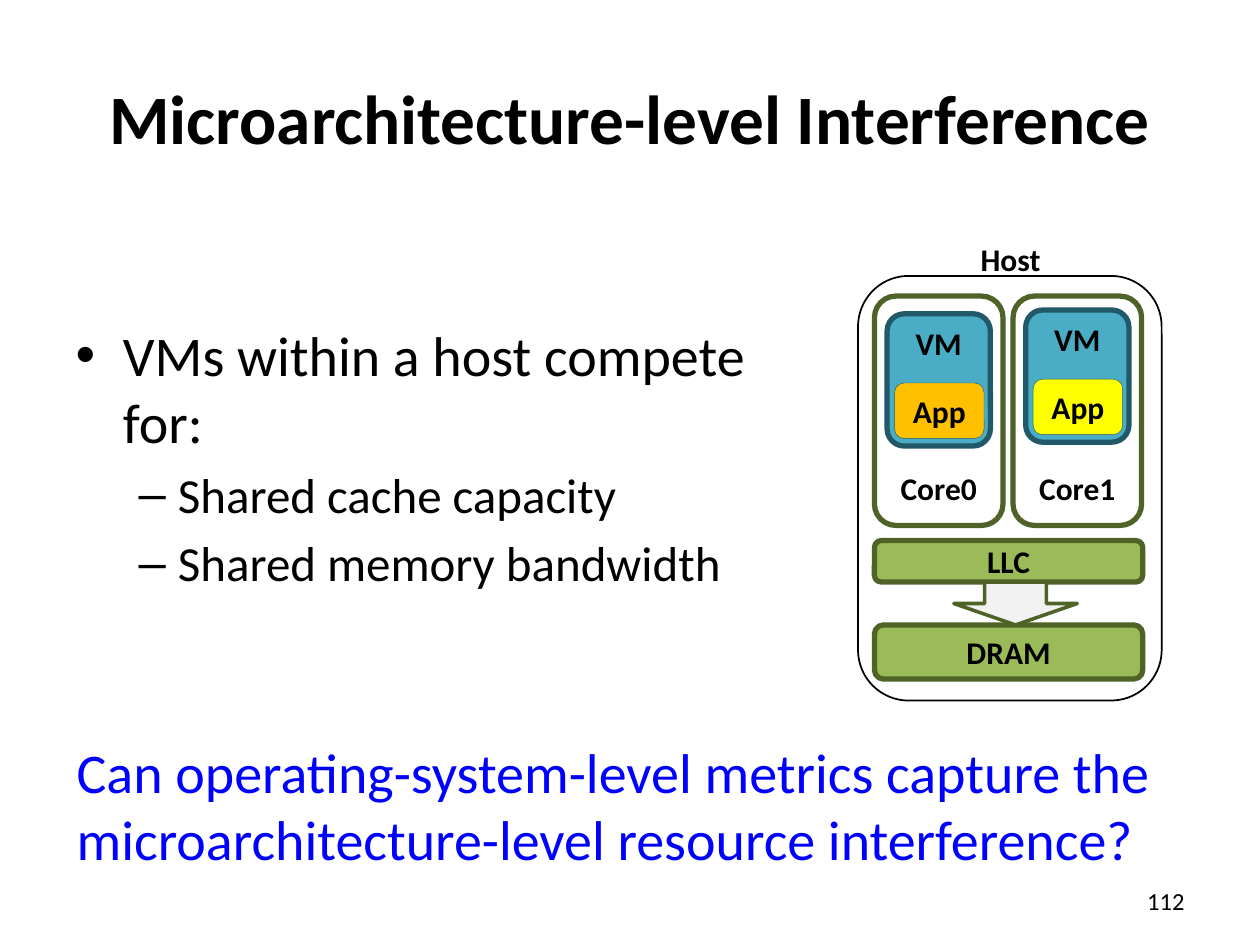
from pptx import Presentation
from pptx.dml.color import RGBColor
from pptx.enum.shapes import MSO_SHAPE
from pptx.enum.text import MSO_ANCHOR, PP_ALIGN
from pptx.util import Inches, Pt


def style_text(paragraph, size, bold=False, color="000000", align=None):
    paragraph.font.name = "Calibri"
    paragraph.font.size = Pt(size)
    paragraph.font.bold = bold
    paragraph.font.color.rgb = RGBColor.from_string(color)
    paragraph.alignment = align


def add_block(box, line, width, fill=None, label="", anchor=MSO_ANCHOR.MIDDLE,
              kind=MSO_SHAPE.ROUNDED_RECTANGLE):
    shape = slide.shapes.add_shape(kind, *map(Inches, box))
    shape.shadow.inherit = False
    shape.line.color.rgb = RGBColor.from_string(line)
    shape.line.width = Pt(width)
    if fill:
        shape.fill.solid()
        shape.fill.fore_color.rgb = RGBColor.from_string(fill)
    else:
        shape.fill.background()
    if label:
        frame = shape.text_frame
        frame.text = label
        frame.vertical_anchor = anchor
        frame.margin_left = frame.margin_right = 0
        frame.margin_top = Inches(0.04)
        # Labels at the bottom edge keep clear of the thick outline
        frame.margin_bottom = Inches(0.1 if anchor == MSO_ANCHOR.BOTTOM else 0.04)
        style_text(frame.paragraphs[0], 18, bold=True, align=PP_ALIGN.CENTER)


presentation = Presentation()
presentation.slide_width = Inches(10)
presentation.slide_height = Inches(7.5)
slide = presentation.slides.add_slide(presentation.slide_layouts[1])

# Title
title = slide.shapes.title
title.left, title.top, title.width, title.height = map(Inches, (0.5, 0.3, 9, 1.25))
title.text_frame.text = "Microarchitecture-level Interference"
title.text_frame.vertical_anchor = MSO_ANCHOR.MIDDLE
style_text(title.text_frame.paragraphs[0], 39.6, bold=True, align=PP_ALIGN.CENTER)

# Bullet list
body = slide.placeholders[1]
body.left, body.top, body.width, body.height = map(Inches, (0.5, 2.49, 6.23, 2.54))
bullets = [
    ("VMs within a host compete for:", 0, 32),
    ("Shared cache capacity", 1, 28),
    ("Shared memory bandwidth", 1, 28),
]
body.text_frame.text = "\n".join(text for text, level, size in bullets)
for paragraph, (text, level, size) in zip(body.text_frame.paragraphs, bullets):
    paragraph.level = level
    style_text(paragraph, size)

# Host outline
GREEN, TEAL = "4F6228", "215968"
add_block((6.81, 2.19, 2.41, 3.37), "000000", 1)

# Cores, each with a virtual machine and its application
cores = [
    ("Core0", 6.94, 2.49, "FFC000"),
    ("Core1", 8.04, 2.46, "FFFF00"),
]
for name, left, vm_top, app_color in cores:
    add_block((left, 2.35, 1.02, 1.82), GREEN, 3, label=name, anchor=MSO_ANCHOR.BOTTOM)
    add_block((left + 0.1, vm_top, 0.82, 1.05), TEAL, 3, "4BACC6", "VM", MSO_ANCHOR.TOP)
    add_block((left + 0.16, vm_top + 0.55, 0.71, 0.44), TEAL, 0.25, app_color, "App")

# Shared cache and memory, joined by a block arrow
add_block((6.94, 4.29, 2.13, 0.33), GREEN, 3, "9BBB59", "LLC")
add_block((6.94, 4.96, 2.13, 0.43), GREEN, 3, "9BBB59", "DRAM")
add_block((7.57, 4.62, 0.98, 0.34), GREEN, 2, "F2F2F2", kind=MSO_SHAPE.DOWN_ARROW)

# Host label, closing question and page number
texts = [
    ("Host", (7.68, 1.86, 0.68, 0.4), 18, True, "000000", PP_ALIGN.CENTER, MSO_ANCHOR.TOP),
    ("Can operating-system-level metrics capture the "
     "microarchitecture-level resource interference?",
     (0.51, 5.8, 8.78, 1.18), 32, False, "0000FF", PP_ALIGN.LEFT, MSO_ANCHOR.TOP),
    ("112", (7.17, 6.95, 2.33, 0.4), 14, False, "000000", PP_ALIGN.RIGHT, MSO_ANCHOR.MIDDLE),
]
for text, box, size, bold, color, align, anchor in texts:
    frame = slide.shapes.add_textbox(*map(Inches, box)).text_frame
    frame.text = text
    frame.word_wrap = text != "Host"
    frame.vertical_anchor = anchor
    style_text(frame.paragraphs[0], size, bold, color, align)

presentation.save("out.pptx")
